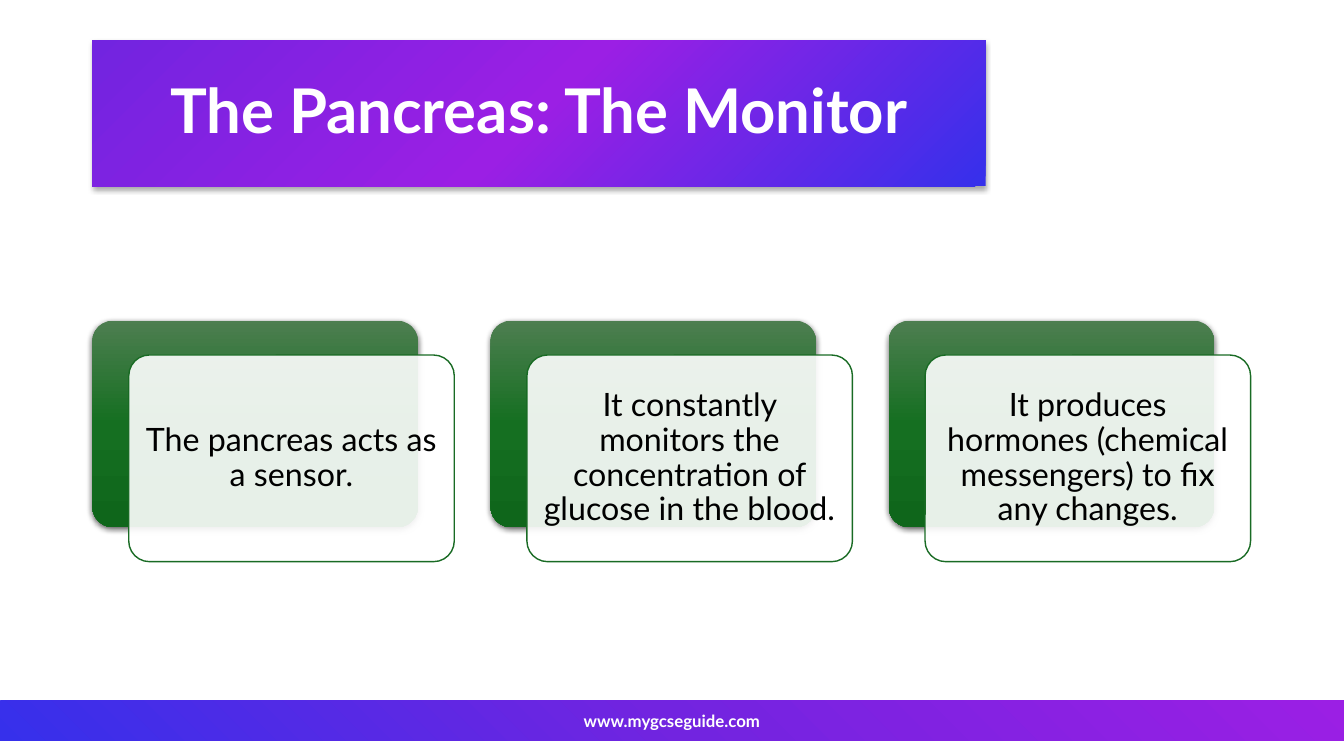
from lxml import etree
from pptx import Presentation
from pptx.dml.color import RGBColor
from pptx.enum import shapes, text
from pptx.oxml import ns
from pptx.util import Pt

COLORS = {
    "white": "FFFFFF", "black": "000000", "outline": "196B24",
    "violet": "7224E0", "purple": "9B1FE4", "blue": "3630EB",
    "leaf": "4D7E50", "green": "156F21", "forest": "0F661B",
}
FONT = "Lato"
FACTS = [
    "The pancreas acts as a sensor.",
    "It constantly monitors the concentration of glucose in the blood.",
    "It produces hormones (chemical messengers) to fix any changes.",
]
CARD_LEFT, CARD_TOP, CARD_STEP = 66, 229, 284.4
CARD_SIZE = (232.5, 147.6)
CARD_OFFSET = (26, 24.6)


def rgb(name):
    return RGBColor.from_string(COLORS[name])


def add_xml(parent, tag, **attributes):
    return etree.SubElement(parent, ns.qn(tag), attributes)


def fill_gradient(shape, stops, angle=None):
    """Spread the stops evenly, along an angle or outwards from the top left."""
    shape.fill.gradient()
    gradient = shape._element.spPr.find(ns.qn("a:gradFill"))
    for child in list(gradient):
        gradient.remove(child)
    stop_list = add_xml(gradient, "a:gsLst")
    for i, name in enumerate(stops):
        stop = add_xml(stop_list, "a:gs", pos=str(100000 * i // (len(stops) - 1)))
        add_xml(stop, "a:srgbClr", val=COLORS[name])
    if angle is None:
        radial = add_xml(gradient, "a:path", path="circle")
        add_xml(radial, "a:fillToRect", r="100000", b="100000")
    else:
        add_xml(gradient, "a:lin", ang=str(angle * 60000), scaled="0")


def add_shadow(shape, opacity, blur, distance):
    shape.shadow.inherit = False
    effects = shape._element.spPr.find(ns.qn("a:effectLst"))
    shadow = add_xml(effects, "a:outerShdw", blurRad=str(Pt(blur)),
                     dist=str(Pt(distance)), dir="5400000", algn="ctr",
                     rotWithShape="0")
    color = add_xml(shadow, "a:srgbClr", val=COLORS["black"])
    add_xml(color, "a:alpha", val=str(opacity * 1000))


def add_box(slide, kind, left, top, width, height):
    box = slide.shapes.add_shape(kind, Pt(left), Pt(top), Pt(width), Pt(height))
    box.shadow.inherit = False
    box.line.fill.background()
    if kind == shapes.MSO_SHAPE.ROUNDED_RECTANGLE:
        box.adjustments[0] = 0.1
    return box


def write(shape, words, size, color, bold=False, spacing=None, after=0):
    frame = shape.text_frame
    frame.word_wrap = True
    frame.auto_size = text.MSO_AUTO_SIZE.NONE
    frame.vertical_anchor = text.MSO_ANCHOR.MIDDLE
    paragraph = frame.paragraphs[0]
    paragraph.alignment = text.PP_ALIGN.CENTER
    paragraph.line_spacing = spacing
    paragraph.space_after = Pt(after)
    run = paragraph.add_run()
    run.text = words
    run.font.name = FONT
    run.font.size = Pt(size)
    run.font.bold = bold
    run.font.color.rgb = rgb(color)


def add_title(slide, words):
    title = slide.shapes.title
    title.left, title.top, title.width, title.height = (
        Pt(66), Pt(28.8), Pt(638), Pt(104.4))
    fill_gradient(title, ["violet", "purple", "blue"])
    add_shadow(title, 32, 3.5, 2.2)
    write(title, words, 44, "white", bold=True, spacing=0.9)


def add_footer(slide, address):
    band = add_box(slide, shapes.MSO_SHAPE.RECTANGLE, 0, 500.4, 960, 28.8)
    fill_gradient(band, ["blue", "violet", "purple"], angle=315)
    site = slide.shapes.add_textbox(Pt(318), Pt(500.4), Pt(324), Pt(28.8))
    write(site, address, 12, "white", bold=True, after=6)


def add_fact(slide, left, words):
    rounded = shapes.MSO_SHAPE.ROUNDED_RECTANGLE
    backing = add_box(slide, rounded, left, CARD_TOP, *CARD_SIZE)
    fill_gradient(backing, ["leaf", "green", "forest"], angle=90)
    add_shadow(backing, 63, 4.5, 1.5)

    # Translucent card in front, shifted down and right
    shift_x, shift_y = CARD_OFFSET
    card = add_box(slide, rounded, left + shift_x, CARD_TOP + shift_y, *CARD_SIZE)
    card.fill.solid()
    card.fill.fore_color.rgb = rgb("white")
    white = card._element.spPr.find(ns.qn("a:solidFill"))[0]
    add_xml(white, "a:alpha", val="90000")
    card.line.color.rgb = rgb("outline")
    card.line.width = Pt(1)
    frame = card.text_frame
    frame.margin_left = frame.margin_right = Pt(7.2)
    frame.margin_top = frame.margin_bottom = Pt(7.2)
    write(card, words, 23, "black", spacing=0.9, after=8)


def main():
    deck = Presentation()
    deck.slide_width, deck.slide_height = Pt(960), Pt(540)
    slide = deck.slides.add_slide(deck.slide_layouts.get_by_name("Title Only"))
    add_title(slide, "The Pancreas: The Monitor")
    add_footer(slide, "www.mygcseguide.com")
    for i, fact in enumerate(FACTS):
        add_fact(slide, CARD_LEFT + i * CARD_STEP, fact)
    deck.save("out.pptx")


if __name__ == "__main__":
    main()
